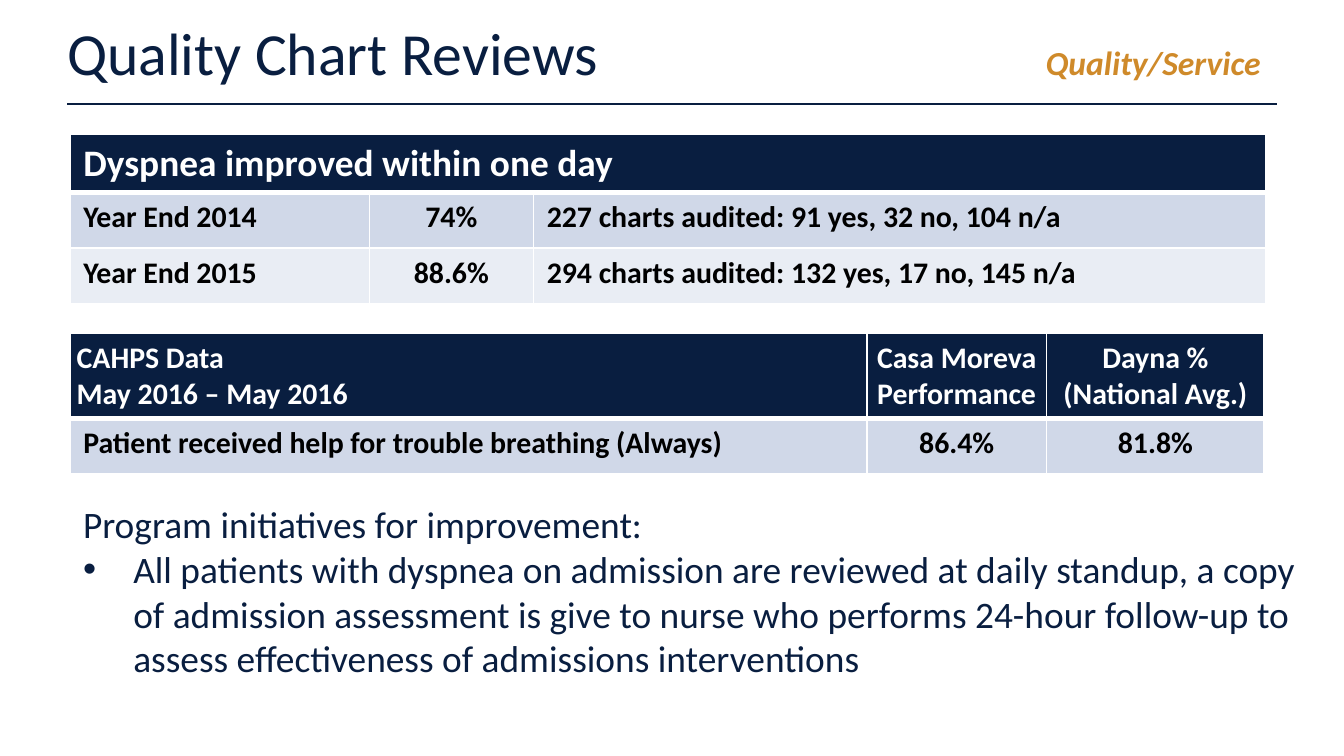
from lxml import etree
from pptx import Presentation
from pptx.dml.color import RGBColor
from pptx.enum import shapes, text
from pptx.oxml.ns import qn
from pptx.util import Cm, Pt

NAVY = RGBColor(0x09, 0x1E, 0x40)
GOLD = RGBColor(0xCF, 0x8A, 0x2A)
WHITE = RGBColor(0xFF, 0xFF, 0xFF)
BLACK = RGBColor(0, 0, 0)
BLUE = RGBColor(0xD0, 0xD8, 0xE8)
PALE = RGBColor(0xE9, 0xED, 0xF4)
LEFT = Cm(1.32)


def style(font, size, color, bold=False):
    font.name, font.size, font.bold = "Calibri", Pt(size), bold
    font.color.rgb = color


def edge(cell, base):
    """Give a cell white borders, 1 pt at the sides and base pt below."""
    props = cell._tc.get_or_add_tcPr()
    for i, (tag, width) in enumerate(
            [("a:lnL", 1), ("a:lnR", 1), ("a:lnT", 1), ("a:lnB", base)]):
        line = etree.Element(qn(tag), w=str(Pt(width)))
        fill = etree.SubElement(line, qn("a:solidFill"))
        etree.SubElement(fill, qn("a:srgbClr"), val=str(WHITE))
        props.insert(i, line)


deck = Presentation()
deck.slide_width, deck.slide_height = Cm(25.4), Cm(14.29)
slide = deck.slides.add_slide(deck.slide_layouts[6])

# Heading with a right-aligned section label
rule = slide.shapes.add_connector(
    shapes.MSO_CONNECTOR.STRAIGHT, Cm(1.27), Cm(1.96), Cm(24.13), Cm(1.96))
rule.line.color.rgb, rule.line.width = NAVY, Pt(1)
etree.SubElement(rule._element.spPr, qn("a:effectLst"))

frame = slide.shapes.add_textbox(0, 0, Cm(25.4), Cm(1.96)).text_frame
frame.word_wrap = True
frame.vertical_anchor = text.MSO_ANCHOR.MIDDLE
frame.margin_left = frame.margin_right = Cm(1.27)
frame.margin_top = frame.margin_bottom = Cm(0.25)
para = frame.paragraphs[0]
tabs = etree.SubElement(para._p.get_or_add_pPr(), qn("a:tabLst"))
etree.SubElement(tabs, qn("a:tab"), pos=str(Cm(22.56)), algn="r")
title = para.add_run()
title.text = "Quality Chart Reviews\t"
style(title.font, 32, NAVY)
label = para.add_run()
label.text = "Quality/Service"
style(label.font, 18, GOLD, True)
label.font.italic = True

# Tables: top, header size, column widths, row heights, centred columns, rows
tables = [
    (2.54, 20, [5.66, 3.1, 13.84], [1.05, 1.05, 1.05], [1], [
        ["Dyspnea improved within one day", "", ""],
        ["Year End 2014", "74%", "227 charts audited: 91 yes, 32 no, 104 n/a"],
        ["Year End 2015", "88.6%",
         "294 charts audited: 132 yes, 17 no, 145 n/a"]]),
    (6.3, 16, [15.06, 3.4, 4.11], [1.57, 1.05], [1, 2], [
        ["CAHPS Data\vMay 2016 – May 2016", "Casa Moreva Performance",
         "Dayna %\v(National Avg.)"],
        ["Patient received help for trouble breathing (Always)",
         "86.4%", "81.8%"]]),
]
for top, size, cols, highs, mid, rows in tables:
    grid = slide.shapes.add_table(
        len(rows), len(cols), LEFT, Cm(top),
        Cm(sum(cols)), Cm(sum(highs))).table
    for col, width in zip(grid.columns, cols):
        col.width = Cm(width)
    for r, row in enumerate(rows):
        grid.rows[r].height = Cm(highs[r])
        for c, words in enumerate(row):
            cell = grid.cell(r, c)
            edge(cell, 1 if r else 3)
            cell.fill.solid()
            cell.fill.fore_color.rgb = (NAVY, BLUE, PALE)[r]
            cell.text = words
            para = cell.text_frame.paragraphs[0]
            if c in mid:
                para.alignment = text.PP_ALIGN.CENTER
            style(para.font, 16 if r else size, BLACK if r else WHITE, True)
            if r == 0 and size == 16:
                cell.margin_left = cell.margin_right = Cm(0.13)
    if not rows[0][1]:
        grid.cell(0, 0).merge(grid.cell(0, len(cols) - 1))

# Initiatives
frame = slide.shapes.add_textbox(
    LEFT, Cm(9.35), Cm(23.75), Cm(4.45)).text_frame
frame.word_wrap = True
frame.text = (
    "Program initiatives for improvement:\n"
    "All patients with dyspnea on admission are reviewed at daily standup, "
    "a copy of admission assessment is give to nurse who performs 24-hour "
    "follow-up to assess effectiveness of admissions interventions")
props = frame.paragraphs[1]._p.get_or_add_pPr()
props.set("marL", str(Cm(0.95)))
props.set("indent", str(-Cm(0.95)))
etree.SubElement(props, qn("a:buFont"), typeface="Arial")
etree.SubElement(props, qn("a:buChar"), char="•")
for para in frame.paragraphs:
    style(para.font, 20, NAVY)

deck.save("out.pptx")
